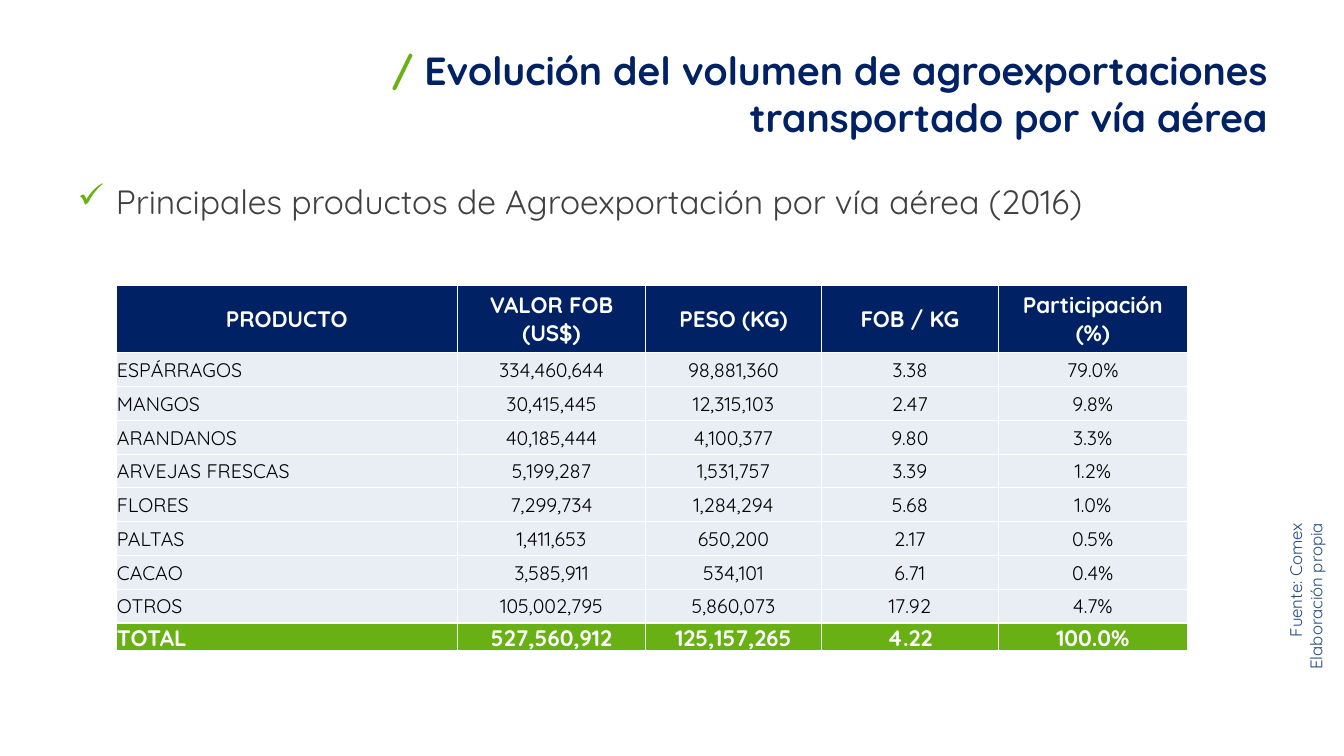
from lxml.etree import SubElement
from pptx import Presentation
from pptx.dml.color import RGBColor
from pptx.enum.text import MSO_ANCHOR, MSO_AUTO_SIZE, PP_ALIGN
from pptx.oxml.ns import qn
from pptx.util import Inches, Pt

WIDE, HIGH = Inches(13.33), Inches(7.5)
FACE = "Quicksand"
HUES = {
    "navy": "002264", "green": "68B013", "gray": "404040", "blue": "1F497D",
    "pale": "E9EDF4", "white": "FFFFFF", "black": "000000",
}
HEAD = {"size": Pt(16), "bold": True, "hue": "white"}
BODY = {"size": Pt(14), "bold": False, "hue": "black"}
COLS = [3.39, 1.86, 1.75, 1.75, 1.88]
ROWS = [
    ["PRODUCTO", "VALOR FOB (US$)", "PESO (KG)", "FOB / KG", "Participación\v(%)"],
    ["ESPÁRRAGOS", "334,460,644", "98,881,360", "3.38", "79.0%"],
    ["MANGOS", "30,415,445", "12,315,103", "2.47", "9.8%"],
    ["ARANDANOS", "40,185,444", "4,100,377", "9.80", "3.3%"],
    ["ARVEJAS FRESCAS", "5,199,287", "1,531,757", "3.39", "1.2%"],
    ["FLORES", "7,299,734", "1,284,294", "5.68", "1.0%"],
    ["PALTAS", "1,411,653", "650,200", "2.17", "0.5%"],
    ["CACAO", "3,585,911", "534,101", "6.71", "0.4%"],
    ["OTROS", "105,002,795", "5,860,073", "17.92", "4.7%"],
    ["TOTAL", "527,560,912", "125,157,265", "4.22", "100.0%"],
]


def shade(name):
    """Return the named colour."""
    return RGBColor.from_string(HUES[name])


def place(left, top, wide, high):
    """Turn percentages of the slide into lengths."""
    return [int(part * side / 100) for part, side in
            zip((left, top, wide, high), (WIDE, HIGH, WIDE, HIGH))]


def apply(item, looks):
    """Set each format value on an object."""
    for name, value in looks.items():
        setattr(item, name, value)


def style(run, hue, **looks):
    """Format a run of text."""
    apply(run.font, {"name": FACE, **looks})
    run.font.color.rgb = shade(hue)


def add_text(slide, area, lines, align, **looks):
    """Add a text box of lines, each a list of text and format pairs."""
    box = slide.shapes.add_textbox(*place(*area))
    frame = box.text_frame
    apply(frame, {"word_wrap": True, **looks})
    for spot, line in enumerate(lines):
        para = frame.add_paragraph() if spot else frame.paragraphs[0]
        para.alignment = align
        for text, form in line:
            run = para.add_run()
            run.text = text
            style(run, **form)
    return box


def add_tick(para):
    """Give a paragraph a green tick bullet."""
    props = para._p.get_or_add_pPr()
    props.set("marL", str(Inches(0.38)))
    props.set("indent", str(Inches(-0.38)))
    tint = SubElement(props, qn("a:buClr"))
    SubElement(tint, qn("a:srgbClr"), val=HUES["green"])
    SubElement(props, qn("a:buChar"), char="✓")


def add_edges(cell):
    """Draw thin white borders around a cell."""
    props = cell._tc.get_or_add_tcPr()
    for side in ("lnL", "lnR", "lnT", "lnB"):
        edge = SubElement(props, qn("a:" + side), w=str(Pt(1)))
        fill = SubElement(edge, qn("a:solidFill"))
        SubElement(fill, qn("a:srgbClr"), val=HUES["white"])


def fill_cell(cell, text, align, back, form):
    """Write and format one table cell."""
    thin = Inches(0.01)
    apply(cell, {"margin_left": thin, "margin_right": thin, "margin_top": thin,
                 "margin_bottom": 0, "vertical_anchor": MSO_ANCHOR.MIDDLE})
    add_edges(cell)
    cell.fill.solid()
    cell.fill.fore_color.rgb = shade(back)
    para = cell.text_frame.paragraphs[0]
    para.text = text
    para.alignment = align
    for run in para.runs:
        style(run, **form)


def add_grid(slide, area):
    """Add the product table with its header and total rows."""
    spot = place(*area)
    last = len(ROWS) - 1
    grid = slide.shapes.add_table(len(ROWS), len(COLS), *spot).table
    looks = {0: ("navy", HEAD), last: ("green", HEAD)}
    parts = [2] + [1] * (last - 1) + [0.8]
    for col, share in zip(grid.columns, COLS):
        col.width = int(spot[2] * share / sum(COLS))
    for row, (texts, part) in enumerate(zip(ROWS, parts)):
        grid.rows[row].height = int(spot[3] * part / sum(parts))
        back, form = looks.get(row, ("pale", BODY))
        for col, text in enumerate(texts):
            align = PP_ALIGN.LEFT if row and not col else PP_ALIGN.CENTER
            fill_cell(grid.cell(row, col), text, align, back, form)


def main():
    """Build and save the slide."""
    deck = Presentation()
    apply(deck, {"slide_width": WIDE, "slide_height": HIGH})
    slide = deck.slides.add_slide(deck.slide_layouts[6])
    title = {"size": Pt(28), "bold": True}
    add_text(slide, (26.41, 4, 68.64, 16.67), [[
        ("/", {**title, "hue": "green"}),
        (" Evolución del volumen de agroexportaciones transportado por vía aérea",
         {**title, "hue": "navy"}),
    ]], PP_ALIGN.RIGHT, vertical_anchor=MSO_ANCHOR.MIDDLE)
    lead = add_text(slide, (5.03, 23.33, 90.02, 66), [[
        ("Principales productos de Agroexportación por vía aérea (2016)",
         {"size": Pt(24), "hue": "gray"}),
    ]], PP_ALIGN.LEFT)
    add_tick(lead.text_frame.paragraphs[0])
    note = {"size": Pt(12), "hue": "blue"}
    credit = add_text(slide, (88.97, 79.07, 16.35, 6.67), [
        [("Fuente: Comex", note)], [("Elaboración propia", note)],
    ], PP_ALIGN.RIGHT, auto_size=MSO_AUTO_SIZE.SHAPE_TO_FIT_TEXT)
    credit.rotation = 270
    add_grid(slide, (8.63, 37.73, 79.74, 48.27))
    deck.save("out.pptx")


if __name__ == "__main__":
    main()
